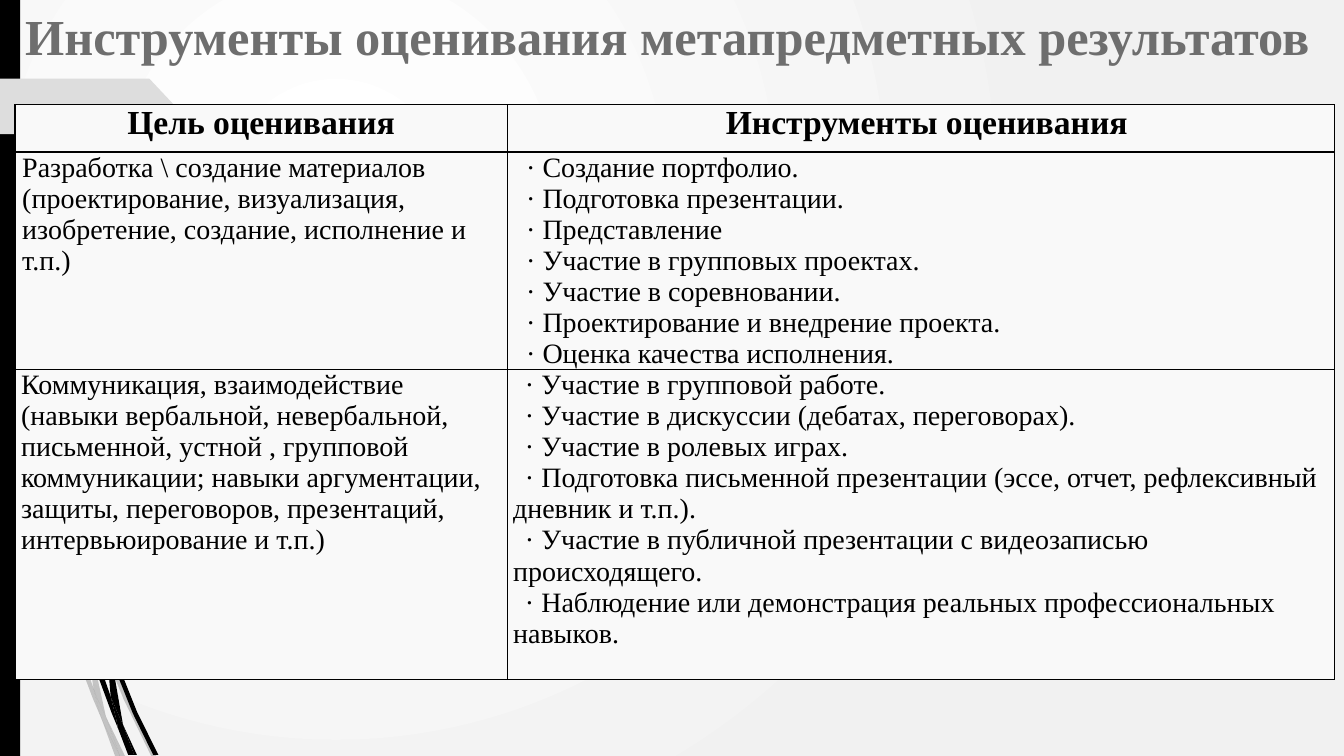
from pptx import Presentation
from pptx import oxml
from pptx import util as u
from pptx.dml.color import RGBColor
from pptx.enum import shapes, text
from pptx.oxml import ns

Cm, Pt = u.Cm, u.Pt
FONT = "Times New Roman"
COLORS = {"black": "000000", "tag": "DDDDDD", "title": "6E6E6E",
          "cell": "F9F9F9", "light": "FFFFFF", "shade": "F1F1F1"}

# Outlines of the stalks in the lower left corner, in centimetres
GREY_STALKS = [
    [(2.34, 15.42), (2.24, 15.14), (2.24, 15.49), (3.12, 17.63),
     (3.81, 19.05), (3.94, 19.05), (3.23, 17.58)],
    [(2.67, 18.06), (3.02, 19.05), (3.15, 19.05)],
    [(0.28, 8.89), (0.71, 11.94), (1.65, 15.77), (2.34, 17.6), (2.57, 18.14),
     (2.51, 17.96), (2.36, 17.35), (1.78, 15.72), (0.79, 11.91), (0.43, 9.55)],
    [(2.13, 15.21), (2.21, 16.41), (2.36, 17.35), (2.44, 17.58),
     (2.67, 18.06), (2.31, 16.41), (2.24, 15.49)],
    [(2.57, 18.14), (2.9, 19.05), (3.02, 19.05)],
    [(2.36, 17.35), (2.51, 17.96), (2.57, 18.14), (3.02, 19.05),
     (2.67, 18.06), (2.44, 17.58)],
]
BLACK_STALKS = [
    [(2.79, 16.28), (2.82, 16.66), (3.35, 17.98), (3.86, 19.02),
     (3.99, 19.02), (3.45, 17.93), (2.87, 16.48)],
    [(1.45, 12.12), (1.73, 14.15), (2.36, 16.74), (2.82, 17.98), (2.97, 18.34),
     (2.95, 18.21), (2.79, 17.55), (2.49, 16.69), (1.83, 14.12), (1.63, 12.83)],
    [(3.1, 18.26), (3.38, 19.02), (3.45, 19.02)],
    [(2.97, 18.34), (3.23, 19.02), (3.33, 19.02)],
    [(2.69, 16.38), (2.79, 17.55), (2.95, 17.93), (3.1, 18.26), (2.82, 16.66)],
    [(2.79, 17.55), (2.95, 18.21), (2.97, 18.34), (3.3, 19.02),
     (3.38, 19.02), (3.1, 18.26), (2.95, 17.93)],
]

# Each row: height, side margin, font size, goal, tools
ROWS = [
    (1.19, 0.13, 24, "Цель оценивания", ["Инструменты оценивания"]),
    (5.46, 0.18, 20,
     "Разработка \\ создание материалов (проектирование, визуализация, "
     "изобретение, создание, исполнение и т.п.)",
     ["· Создание портфолио.",
      "· Подготовка презентации.",
      "· Представление",
      "· Участие в групповых проектах.",
      "· Участие в соревновании.",
      "· Проектирование и внедрение проекта.",
      "· Оценка качества исполнения."]),
    (7.82, 0.15, 20,
     "Коммуникация, взаимодействие (навыки вербальной, невербальной, "
     "письменной, устной , групповой коммуникации; навыки аргументации, "
     "защиты, переговоров, презентаций, интервьюирование и т.п.)",
     ["· Участие в групповой работе.",
      "· Участие в дискуссии (дебатах, переговорах).",
      "· Участие в ролевых играх.",
      "· Подготовка письменной презентации (эссе, отчет, рефлексивный "
      "дневник и т.п.).",
      "· Участие в публичной презентации с видеозаписью происходящего.",
      "· Наблюдение или демонстрация реальных профессиональных навыков."]),
]
COLUMN_WIDTHS = (12.4, 20.85)


def color(name):
    return RGBColor.from_string(COLORS[name])


def set_font(para, size, name, bold):
    para.font.name, para.font.size, para.font.bold = FONT, Pt(size), bold
    para.font.color.rgb = color(name)


def paint(shape, name):
    shape.shadow.inherit = False
    shape.fill.solid()
    shape.fill.fore_color.rgb = color(name)
    shape.line.fill.background()


def set_background(page):
    fill = page.background.fill
    fill.gradient()
    for stop, name, position in zip(fill.gradient_stops, ("light", "shade"), (0, 1)):
        stop.color.rgb = color(name)
        stop.position = position
    direction = page.background._cSld.find(".//" + ns.qn("a:lin"))
    direction.getparent().replace(direction, oxml.parse_xml(
        f'<a:path {ns.nsdecls("a")} path="circle">'
        '<a:fillToRect l="50000" t="50000" r="100000" b="100000"/></a:path>'))


def add_block(page, kind, left, top, width, height, name):
    block = page.shapes.add_shape(kind, Cm(left), Cm(top), Cm(width), Cm(height))
    paint(block, name)
    return block


def add_stalk(page, outline, opacity):
    points = [(round(x * 100), round(y * 100)) for x, y in outline]
    builder = page.shapes.build_freeform(*points[0], scale=Cm(0.01))
    builder.add_line_segments(points[1:], close=True)
    stalk = builder.convert_to_shape()
    paint(stalk, "black")
    if opacity < 100:
        tint = stalk._element.spPr.find(".//" + ns.qn("a:srgbClr"))
        tint.append(oxml.parse_xml(
            f'<a:alpha {ns.nsdecls("a")} val="{opacity * 1000}"/>'))


def format_title(page, words):
    title = page.shapes.title
    title.left, title.top, title.width, title.height = Cm(0.38), 0, Cm(33.48), Cm(5.28)
    frame = title.text_frame
    frame.text = words
    frame.word_wrap = True
    frame.auto_size = text.MSO_AUTO_SIZE.NONE
    frame.vertical_anchor = text.MSO_ANCHOR.TOP
    para = frame.paragraphs[0]
    para.alignment = text.PP_ALIGN.LEFT
    set_font(para, 36, "title", True)


def add_borders(cell):
    for index, side in enumerate(("lnL", "lnR", "lnT", "lnB")):
        cell._tc.get_or_add_tcPr().insert(index, oxml.parse_xml(
            f'<a:{side} {ns.nsdecls("a")} w="12700"><a:solidFill>'
            f'<a:srgbClr val="{COLORS["black"]}"/></a:solidFill></a:{side}>'))


def fill_cell(cell, lines, margin, size, header, indent=0, space_after=0):
    cell.margin_left = cell.margin_right = Cm(margin)
    cell.margin_top = cell.margin_bottom = 0
    cell.fill.solid()
    cell.fill.fore_color.rgb = color("cell")
    add_borders(cell)
    cell.text = "\n".join(lines)
    for para in cell.text_frame.paragraphs:
        para.alignment = text.PP_ALIGN.CENTER if header else text.PP_ALIGN.LEFT
        para.space_after = Pt(space_after)
        para._p.get_or_add_pPr().set("indent", str(Cm(indent)))
        set_font(para, size, "black", header)


def add_assessment_table(page):
    frame = page.shapes.add_table(
        len(ROWS), len(COLUMN_WIDTHS), Cm(0.38), Cm(2.64),
        Cm(sum(COLUMN_WIDTHS)), Cm(sum(row[0] for row in ROWS)))
    table = frame.table
    for column, width in zip(table.columns, COLUMN_WIDTHS):
        column.width = Cm(width)
    for index, (height, margin, size, goal, tools) in enumerate(ROWS):
        table.rows[index].height = Cm(height)
        header = index == 0
        fill_cell(table.cell(index, 0), [goal], margin, size, header, space_after=10)
        fill_cell(table.cell(index, 1), tools, margin, size, header, indent=0.3)


def main():
    deck = Presentation()
    deck.slide_width, deck.slide_height = Cm(33.87), Cm(19.05)
    page = deck.slides.add_slide(deck.slide_layouts[5])

    # Backdrop
    set_background(page)
    for stalks, opacity in ((GREY_STALKS, 20), (BLACK_STALKS, 100)):
        for outline in stalks:
            add_stalk(page, outline, opacity)
    add_block(page, shapes.MSO_SHAPE.RECTANGLE, 0, 0, 0.51, 19.05, "black")
    tag = add_block(page, shapes.MSO_SHAPE.PENTAGON, 0, 1.98, 4.42, 1.4, "tag")
    tag.adjustments[0] = 0.47

    # Content
    format_title(page, "Инструменты оценивания метапредметных результатов")
    add_assessment_table(page)
    deck.save("out.pptx")


if __name__ == "__main__":
    main()
